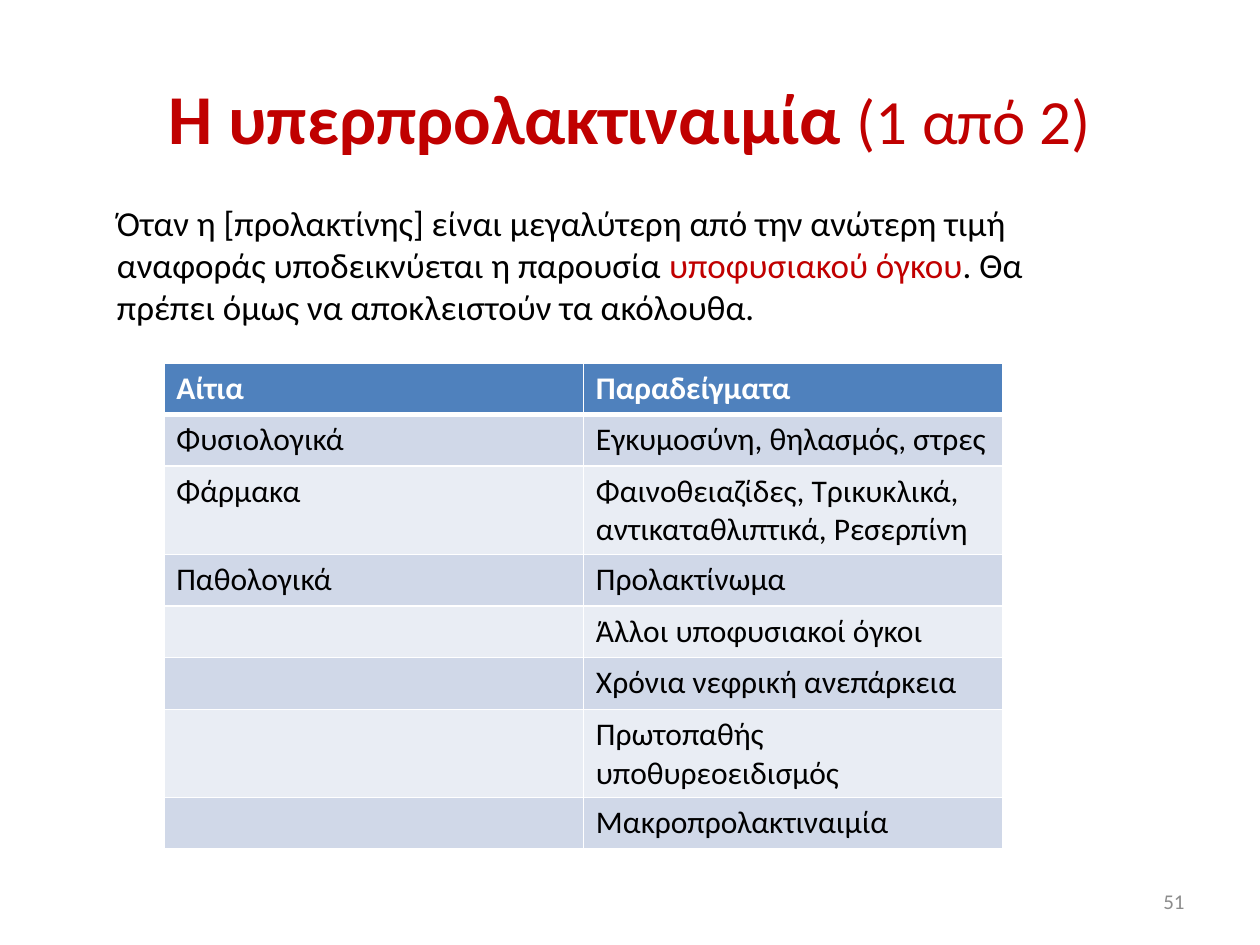
from dataclasses import dataclass

from lxml.etree import SubElement
from pptx import Presentation
from pptx.dml.color import RGBColor
from pptx.enum.text import MSO_ANCHOR, PP_ALIGN
from pptx.oxml.ns import qn
from pptx.util import Inches, Pt


@dataclass(frozen=True)
class Theme:
    font: str = "Calibri"
    accent: str = "C00000"
    text: str = "000000"
    muted: str = "8C8C8C"
    white: str = "FFFFFF"
    header: str = "4F81BD"
    bands: tuple = ("D0D8E8", "E9EDF4")
    title_size: int = 40
    subtitle_size: int = 36
    body_size: int = 20
    table_size: int = 18
    number_size: int = 12


THEME = Theme()

CAUSES = [
    ("Αίτια", "Παραδείγματα"),
    ("Φυσιολογικά", "Εγκυμοσύνη, θηλασμός, στρες"),
    ("Φάρμακα", "Φαινοθειαζίδες, Τρικυκλικά, αντικαταθλιπτικά, Ρεσερπίνη"),
    ("Παθολογικά", "Προλακτίνωμα"),
    ("", "Άλλοι υποφυσιακοί όγκοι"),
    ("", "Χρόνια νεφρική ανεπάρκεια"),
    ("", "Πρωτοπαθής υποθυρεοειδισμός"),
    ("", "Μακροπρολακτιναιμία"),
]


def add_run(p, text, *, size, color=THEME.text, bold=False):
    r = p.add_run()
    r.text = text
    r.font.name = THEME.font
    r.font.size = Pt(size)
    r.font.bold = bold
    r.font.color.rgb = RGBColor.from_string(color)


def add_text(s, box, runs, *, align=PP_ALIGN.LEFT, anchor=MSO_ANCHOR.TOP):
    """Add a text box; runs are (text, format) pairs of one paragraph."""
    tf = s.shapes.add_textbox(*map(Inches, box)).text_frame
    tf.word_wrap = True
    tf.vertical_anchor = anchor
    p = tf.paragraphs[0]
    p.alignment = align
    for text, style in runs:
        add_run(p, text, **style)


def set_borders(cell, bottom):
    tcPr = cell._tc.get_or_add_tcPr()
    for side, width in (("L", 1), ("R", 1), ("T", 1), ("B", bottom)):
        ln = SubElement(tcPr, qn(f"a:ln{side}"), w=str(Pt(width)))
        fill = SubElement(ln, qn("a:solidFill"))
        SubElement(fill, qn("a:srgbClr"), val=THEME.white)


def add_cause_table(s, left, top, col_width, row_height):
    n_rows, n_cols = len(CAUSES), len(CAUSES[0])
    table = s.shapes.add_table(
        n_rows, n_cols, Inches(left), Inches(top),
        Inches(col_width * n_cols), Inches(row_height * n_rows)).table
    for i, row in enumerate(CAUSES):
        table.rows[i].height = Inches(row_height)
        is_header = i == 0
        fill = THEME.header if is_header else THEME.bands[(i - 1) % 2]
        color = THEME.white if is_header else THEME.text
        for j, text in enumerate(row):
            cell = table.cell(i, j)
            # Borders come before the fill in the cell properties
            set_borders(cell, bottom=3 if is_header else 1)
            cell.fill.solid()
            cell.fill.fore_color.rgb = RGBColor.from_string(fill)
            p = cell.text_frame.paragraphs[0]
            p.font.size = Pt(THEME.table_size)
            if text:
                add_run(p, text, size=THEME.table_size, color=color, bold=is_header)


def main():
    prs = Presentation()
    prs.slide_width, prs.slide_height = Inches(10), Inches(7.5)
    s = prs.slides.add_slide(prs.slide_layouts[6])

    # Title
    add_text(s, (0.5, 0.3, 9, 1.25), [
        ("H υπερπρολακτιναιμία ",
         dict(size=THEME.title_size, color=THEME.accent, bold=True)),
        ("(1 από 2)", dict(size=THEME.subtitle_size, color=THEME.accent)),
    ], align=PP_ALIGN.CENTER, anchor=MSO_ANCHOR.MIDDLE)

    # Page number
    add_text(s, (7.17, 6.95, 2.33, 0.4), [
        ("51", dict(size=THEME.number_size, color=THEME.muted)),
    ], align=PP_ALIGN.RIGHT, anchor=MSO_ANCHOR.MIDDLE)

    # Introduction
    body = dict(size=THEME.body_size)
    add_text(s, (0.83, 1.55, 7.87, 1.11), [
        ("Όταν η [προλακτίνης] είναι μεγαλύτερη από την ανώτερη τιμή "
         "αναφοράς υποδεικνύεται η παρουσία ", body),
        ("υποφυσιακού όγκου", dict(body, color=THEME.accent)),
        (". Θα πρέπει όμως να αποκλειστούν τα ακόλουθα.", body),
    ])

    # Causes and examples
    add_cause_table(s, left=1.3, top=2.88, col_width=3.33, row_height=0.41)

    prs.save("out.pptx")


if __name__ == "__main__":
    main()
